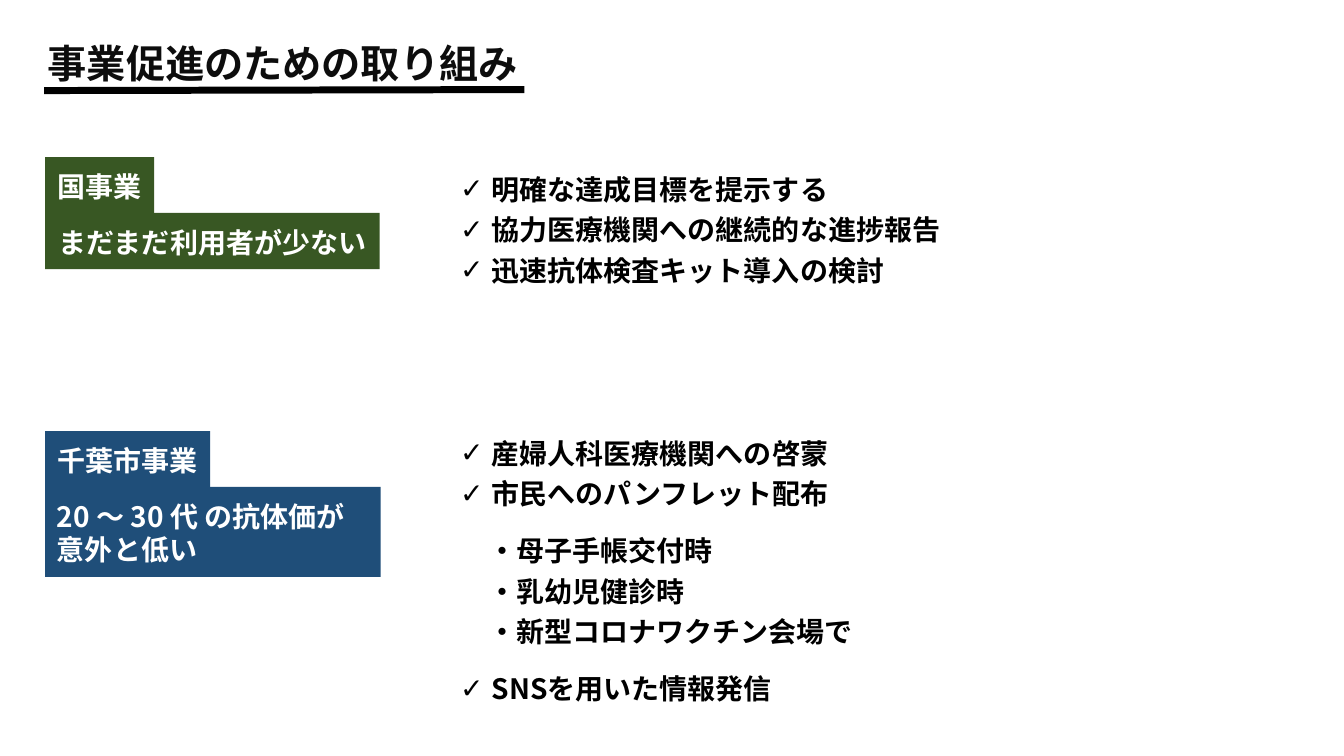
"""Build the slide on measures that promote the national and city programmes."""
from dataclasses import dataclass

from lxml import etree
from pptx import Presentation
from pptx.dml.color import RGBColor
from pptx.enum.shapes import MSO_CONNECTOR, MSO_SHAPE
from pptx.enum.text import MSO_ANCHOR, MSO_AUTO_SIZE, PP_ALIGN
from pptx.oxml.ns import qn
from pptx.util import Pt

RECTANGLE = MSO_SHAPE.RECTANGLE
STRAIGHT = MSO_CONNECTOR.STRAIGHT
TOP, MIDDLE = MSO_ANCHOR.TOP, MSO_ANCHOR.MIDDLE
LEFT, CENTER = PP_ALIGN.LEFT, PP_ALIGN.CENTER
NO_AUTOSIZE = MSO_AUTO_SIZE.NONE


@dataclass(frozen=True)
class Theme:
    """Hold the colours, fonts and type sizes of the slide."""
    title_color: RGBColor = RGBColor(0x0D, 0x0D, 0x0D)
    black: RGBColor = RGBColor(0, 0, 0)
    white: RGBColor = RGBColor(0xFF, 0xFF, 0xFF)
    green: RGBColor = RGBColor(0x38, 0x57, 0x23)
    blue: RGBColor = RGBColor(0x1F, 0x4E, 0x79)
    label_font: str = "Arial"
    body_font: str = "Noto Sans CJK JP"
    title_size: int = 28
    body_size: int = 20


THEME = Theme()


def format_frame(frame, anchor, margins):
    """Set the wrapping, anchor and margins of a text frame."""
    values = {"word_wrap": False, "auto_size": NO_AUTOSIZE, "vertical_anchor": anchor}
    sides = ("margin_left", "margin_top", "margin_right", "margin_bottom")
    values.update(zip(sides, map(Pt, margins)))
    for name, value in values.items():
        setattr(frame, name, value)


def write_paragraph(paragraph, text, color, font_name, size=THEME.body_size, alignment=LEFT):
    """Write one bold run into a paragraph."""
    paragraph.alignment = alignment
    run = paragraph.add_run()
    run.text = text
    for name, value in {"name": font_name, "size": Pt(size), "bold": True}.items():
        setattr(run.font, name, value)
    run.font.color.rgb = color
    etree.SubElement(run.font._element, qn("a:ea"), typeface=THEME.body_font)


presentation = Presentation()
presentation.slide_width, presentation.slide_height = Pt(960), Pt(540)
slide = presentation.slides.add_slide(presentation.slide_layouts[5])

title = slide.shapes.title
title.left, title.top, title.width, title.height = Pt(28.1), Pt(25.2), Pt(350.6), Pt(39.6)
format_frame(title.text_frame, MIDDLE, (6, 3, 6, 3))
write_paragraph(title.text_frame.paragraphs[0], "事業促進のための取り組み",
                THEME.title_color, THEME.label_font, THEME.title_size)

underline = slide.shapes.add_connector(STRAIGHT, Pt(31.5), Pt(64.7), Pt(374.5), Pt(64))
underline.line.color.rgb = THEME.black
underline.line.width = Pt(5)
etree.SubElement(underline._element.spPr, qn("a:effectLst"))

labels = [
    (112.3, 78, 40.3, THEME.green, THEME.label_font, CENTER, ["国事業"]),
    (152, 239, 40.3, THEME.green, THEME.label_font, CENTER, ["まだまだ利用者が少ない"]),
    (308, 118, 40.3, THEME.blue, THEME.label_font, CENTER, ["千葉市事業"]),
    (347.8, 239.8, 64.3, THEME.blue, THEME.body_font, LEFT,
     ["20 ～ 30 代 の抗体価が", "意外と低い"]),
]
for top, width, height, color, font_name, alignment, lines in labels:
    label = slide.shapes.add_shape(RECTANGLE, Pt(32.2), Pt(top), Pt(width), Pt(height))
    label.shadow.inherit = False
    label.fill.solid()
    label.fill.fore_color.rgb = color
    label.line.fill.background()
    frame = label.text_frame
    format_frame(frame, MIDDLE, (8.5, 8.5, 8.5, 7))
    for index, text in enumerate(lines):
        paragraph = frame.add_paragraph() if index else frame.paragraphs[0]
        write_paragraph(paragraph, text, THEME.white, font_name, alignment=alignment)

measures = [
    (112.3, 357, 93, [
        ("✓", "明確な達成目標を提示する"),
        ("✓", "協力医療機関への継続的な進捗報告"),
        ("✓", "迅速抗体検査キット導入の検討"),
    ]),
    (301, 294.5, 232.6, [
        ("✓", "産婦人科医療機関への啓蒙"),
        ("✓", "市民へのパンフレット配布"),
        ("", "・母子手帳交付時"),
        ("", "・乳幼児健診時"),
        ("", "・新型コロナワクチン会場で"),
        ("✓", "SNSを用いた情報発信"),
    ]),
]
for top, width, height, items in measures:
    box = slide.shapes.add_textbox(Pt(322.6), Pt(top), Pt(width), Pt(height))
    frame = box.text_frame
    format_frame(frame, TOP, (6, 6, 6, 1.4))
    previous = "✓"
    for index, (bullet, text) in enumerate(items):
        paragraph = frame.add_paragraph() if index else frame.paragraphs[0]
        write_paragraph(paragraph, text, THEME.black, THEME.body_font)
        paragraph.line_spacing = 1.2
        paragraph.space_before = Pt(0 if bullet == previous else 12)
        previous = bullet
        properties = paragraph._p.get_or_add_pPr()
        properties.set("marL", str(Pt(22.5 if bullet else 20)))
        properties.set("indent", str(Pt(-22.5 if bullet else 0)))
        if bullet:
            etree.SubElement(properties, qn("a:buFont"), typeface=THEME.label_font)
            etree.SubElement(properties, qn("a:buChar"), char=bullet)

presentation.save("out.pptx")
